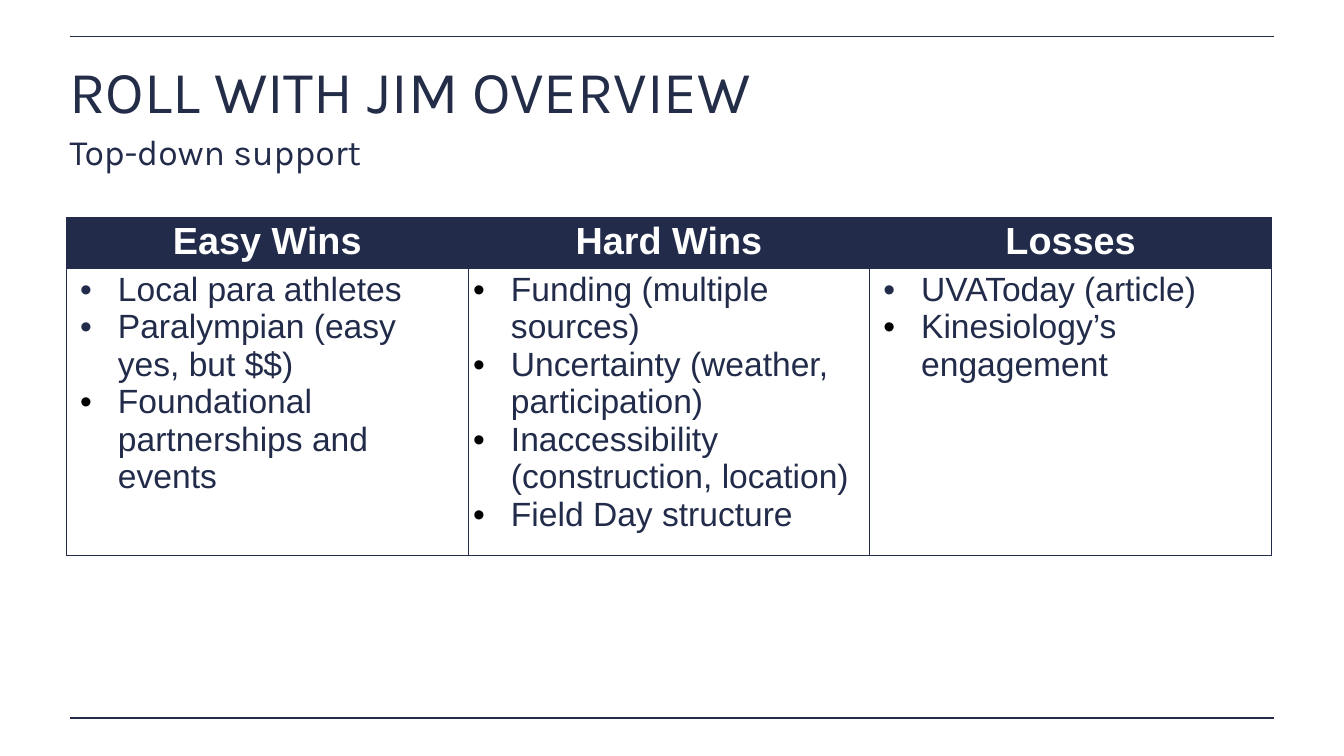
"""Build the overview slide: heading, subheading and a table of wins and losses."""
from lxml import etree
from pptx import Presentation, util as u
from pptx.dml.color import RGBColor
from pptx.enum import shapes, text
from pptx.oxml.ns import qn

COLORS = {"rule": "232D48", "navy": "222C4A", "white": "FFFFFF", "black": "000000"}
WIDTH, HEIGHT = 26.67, 15
LEFT, SPAN = 1.32 / WIDTH, 23.91 / WIDTH

COLUMNS = {
    "Easy Wins": (0.92, [
        ("Local para athletes", "navy"),
        ("Paralympian (easy yes, but $$)", "navy"),
        ("Foundational partnerships and events", "black"),
    ]),
    "Hard Wins": (0.75, [
        ("Funding (multiple sources)", "black"),
        ("Uncertainty (weather, participation)", "black"),
        ("Inaccessibility (construction, location)", "black"),
        ("Field Day structure", "black"),
    ]),
    "Losses": (0.92, [
        ("UVAToday (article)", "navy"),
        ("Kinesiology’s engagement", "black"),
    ]),
}


def rgb(name):
    """Return the named colour."""
    return RGBColor.from_string(COLORS[name])


def add_bullet(p, color, indent, hang=0.75):
    """Give a paragraph a coloured bullet with a hanging indent."""
    pPr = p._p.get_or_add_pPr()
    pPr.set("marL", str(u.Inches(indent)))
    pPr.set("indent", str(-u.Inches(hang)))
    clr = etree.SubElement(pPr, qn("a:buClr"))
    etree.SubElement(clr, qn("a:srgbClr"), val=COLORS[color])
    etree.SubElement(pPr, qn("a:buFont"), typeface="Arial")
    etree.SubElement(pPr, qn("a:buChar"), char="•")


def write(p, content, size, font="Arial", color="navy", bold=False,
          align=None, spacing=None, bullet=None, indent=0):
    """Write formatted text into a paragraph."""
    if align is not None:
        p.alignment = align
    if spacing:
        p.line_spacing = spacing
    if bullet:
        add_bullet(p, bullet, indent)
    r = p.add_run()
    r.text = content
    r.font.size, r.font.name, r.font.bold = u.Pt(size), font, bold
    r.font.color.rgb = rgb(color)


def add_borders(cell, color="navy", width=1):
    """Draw a solid line on all four sides of a cell."""
    tcPr = cell._tc.get_or_add_tcPr()
    for side in "LRTB":
        ln = etree.SubElement(tcPr, qn(f"a:ln{side}"), w=str(u.Pt(width)))
        fill = etree.SubElement(ln, qn("a:solidFill"))
        etree.SubElement(fill, qn("a:srgbClr"), val=COLORS[color])


class Deck:
    """Hold the slide and place elements by shares of its size."""

    def __init__(self):
        """Start a presentation with one blank slide."""
        self.prs = Presentation()
        self.prs.slide_width, self.prs.slide_height = u.Inches(WIDTH), u.Inches(HEIGHT)
        self.s = self.prs.slides.add_slide(self.prs.slide_layouts[6])

    def x(self, share):
        """Turn a share of the width into a length."""
        return round(self.prs.slide_width * share)

    def y(self, share):
        """Turn a share of the height into a length."""
        return round(self.prs.slide_height * share)

    def rule(self, top):
        """Draw a horizontal rule."""
        x1, x2 = self.x(1.38 / WIDTH), self.x(25.29 / WIDTH)
        sp = self.s.shapes.add_connector(
            shapes.MSO_CONNECTOR.STRAIGHT, x1, self.y(top), x2, self.y(top))
        sp.line.color.rgb, sp.line.width = rgb("rule"), u.Pt(2)
        etree.SubElement(sp._element.spPr, qn("a:effectLst"))

    def heading(self, content, top, height, **style):
        """Add a line of heading text."""
        sp = self.s.shapes.add_textbox(
            self.x(LEFT), self.y(top), self.x(SPAN), self.y(height))
        tf = sp.text_frame
        tf.word_wrap = True
        tf.vertical_anchor = text.MSO_ANCHOR.TOP
        tf.margin_left = tf.margin_right = u.Inches(0.06)
        tf.margin_top = tf.margin_bottom = u.Inches(0.06)
        write(tf.paragraphs[0], content, font="Karla", spacing=0.8, **style)

    def table(self, columns, top, row):
        """Add a table with a filled header over bulleted columns."""
        frame = self.s.shapes.add_table(
            2, len(columns), self.x(LEFT), self.y(top), self.x(SPAN), self.y(2 * row))
        table = frame.table
        for i, (title, (indent, items)) in enumerate(columns.items()):
            head, body = table.cell(0, i), table.cell(1, i)
            for cell in (head, body):
                add_borders(cell)
            head.fill.solid()
            head.fill.fore_color.rgb = rgb("navy")
            body.fill.background()
            write(head.text_frame.paragraphs[0], title, 54, color="white",
                  bold=True, align=text.PP_ALIGN.CENTER)
            tf = body.text_frame
            for n, (item, bullet) in enumerate(items):
                p = tf.add_paragraph() if n else tf.paragraphs[0]
                write(p, item, 48, bullet=bullet, indent=indent)


def main():
    """Compose and save the slide."""
    deck = Deck()
    for top in (0.72, 14.25):
        deck.rule(top / HEIGHT)
    deck.heading("ROLL WITH JIM OVERVIEW", 1.29 / HEIGHT, 0.11, size=85, color="rule")
    deck.heading("Top-down support", 2.68 / HEIGHT, 0.06, size=50.9)
    deck.table(COLUMNS, 4.32 / HEIGHT, 0.41 / HEIGHT)
    deck.prs.save("out.pptx")


if __name__ == "__main__":
    main()
